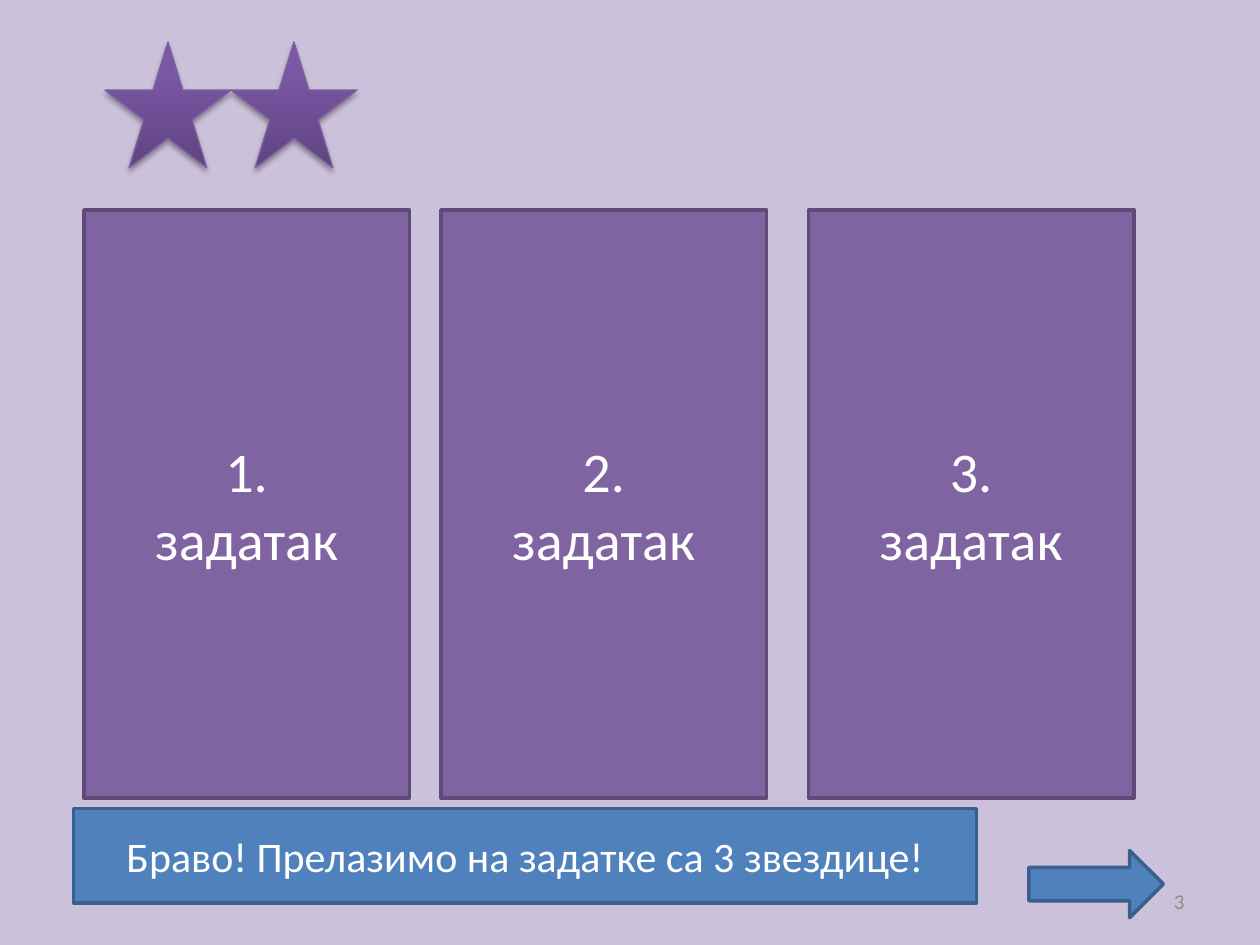
from lxml.etree import SubElement
from pptx import Presentation
from pptx.dml.color import RGBColor
from pptx.enum.shapes import MSO_SHAPE
from pptx.enum.text import MSO_ANCHOR, PP_ALIGN
from pptx.oxml.ns import qn
from pptx.util import Inches, Pt

COLORS = {
    "background": "CCC1DA",
    "purple": "8064A2",
    "purple_edge": "5F4A78",
    "blue": "4F81BD",
    "blue_edge": "3A5F8C",
    "star_edge": "7D60A0",
    "white": "FFFFFF",
    "gray": "8C8C8C",
    "black": "000000",
}
STAR_STOPS = [(0, "5F4480"), (80, "7B58A6"), (100, "7C57A8")]


def rgb(name):
    return RGBColor.from_string(COLORS[name])


class TaskPage:
    """Draws on one page; positions are (column, row, columns, rows) of a 1/12 inch grid."""

    font = "Calibri"
    cells_per_inch = 12

    def __init__(self, deck):
        self.page = deck.slides.add_slide(deck.slide_layouts[6])
        fill = self.page.background.fill
        fill.solid()
        fill.fore_color.rgb = rgb("background")

    def grid(self, cells):
        return [Inches(cell / self.cells_per_inch) for cell in cells]

    def shape(self, kind, cells, color, edge, width=2):
        shape = self.page.shapes.add_shape(kind, *self.grid(cells))
        shape.shadow.inherit = False
        shape.fill.solid()
        shape.fill.fore_color.rgb = rgb(color)
        shape.line.color.rgb = rgb(edge)
        shape.line.width = Pt(width)
        return shape

    def add_lines(self, shape, lines, size, color="white", align=PP_ALIGN.CENTER):
        frame = shape.text_frame
        frame.word_wrap = True
        frame.vertical_anchor = MSO_ANCHOR.MIDDLE
        for number, line in enumerate(lines):
            para = frame.add_paragraph() if number else frame.paragraphs[0]
            para.alignment = align
            span = para.add_run()
            span.text = line
            span.font.name = self.font
            span.font.size = Pt(size)
            span.font.color.rgb = rgb(color)

    def panel(self, cells, lines, size, color):
        shape = self.shape(MSO_SHAPE.RECTANGLE, cells, color, color + "_edge")
        self.add_lines(shape, lines, size)

    def label(self, cells, text, size, color, align):
        box = self.page.shapes.add_textbox(*self.grid(cells))
        self.add_lines(box, [text], size, color, align)

    def star(self, cells):
        star = self.shape(MSO_SHAPE.STAR_5_POINT, cells, "purple", "star_edge", 0.75)
        star.fill.gradient()
        star.fill.gradient_angle = 90
        properties = star._element.spPr
        stops = properties.find(".//" + qn("a:gsLst"))
        stops.clear()
        for position, color in STAR_STOPS:
            stop = SubElement(stops, qn("a:gs"), pos=str(position * 1000))
            SubElement(stop, qn("a:srgbClr"), val=color)
        shadow = SubElement(
            properties.find(qn("a:effectLst")), qn("a:outerShdw"),
            blurRad=str(Pt(3.1)), dist=str(Pt(1.8)), dir="5400000", rotWithShape="0",
        )
        tint = SubElement(shadow, qn("a:srgbClr"), val=COLORS["black"])
        SubElement(tint, qn("a:alpha"), val="35000")


def main():
    deck = Presentation()
    deck.slide_width, deck.slide_height = Inches(10), Inches(7.5)
    page = TaskPage(deck)

    for index in range(2):
        page.star((10 + 12 * index, 4, 12, 12))
    for number, column in enumerate((8, 42, 77), start=1):
        page.panel((column, 20, 31, 56), [f"{number}.", "задатак"], 32, "purple")
    page.panel((7, 77, 86, 9), ["Браво! Прелазимо на задатке са 3 звездице!"], 24, "blue")
    page.label((86, 83.4, 28, 4.8), "3", 12, "gray", PP_ALIGN.RIGHT)
    page.shape(MSO_SHAPE.RIGHT_ARROW, (98, 81, 12.8, 6.4), "blue", "blue_edge")

    deck.save("out.pptx")


if __name__ == "__main__":
    main()
